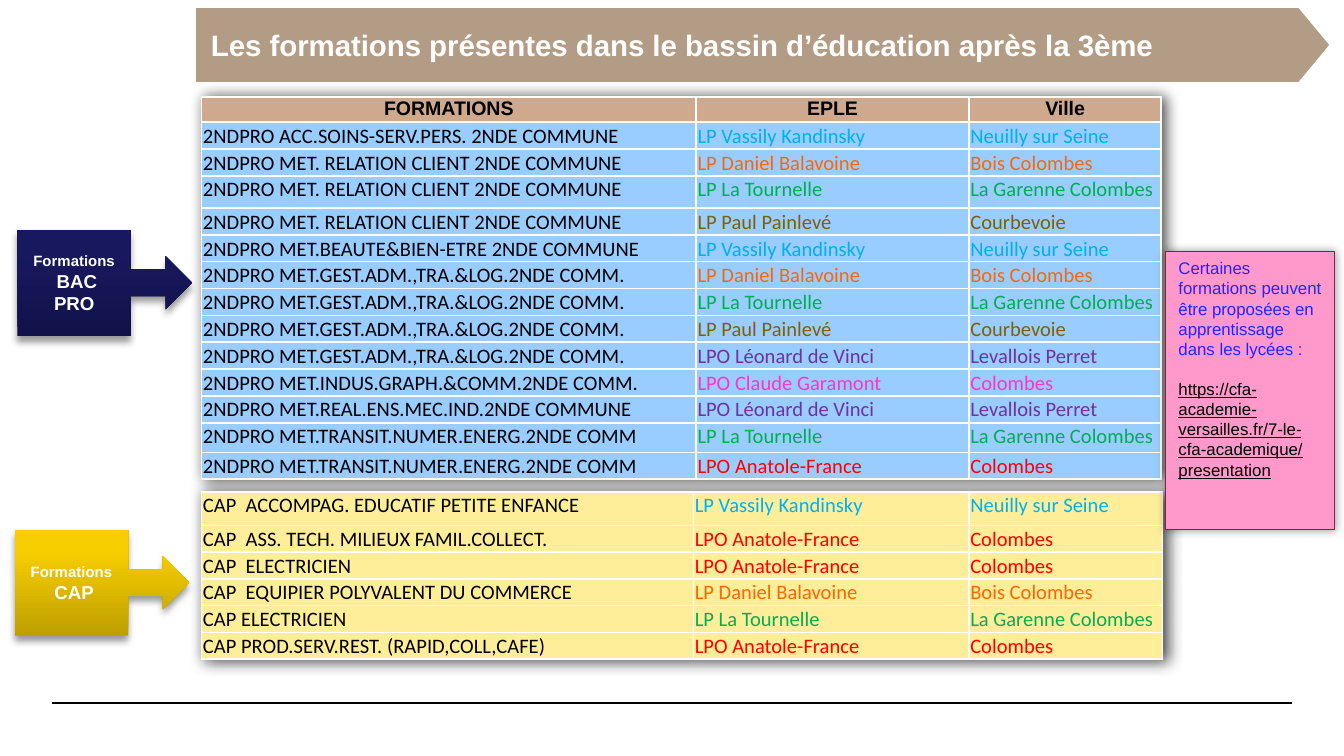
from lxml.etree import SubElement
from pptx import Presentation
from pptx.dml.color import RGBColor
from pptx.enum.shapes import MSO_CONNECTOR, MSO_SHAPE
from pptx.enum.text import MSO_ANCHOR, MSO_AUTO_SIZE, PP_ALIGN
from pptx.oxml import parse_xml
from pptx.oxml.ns import qn
from pptx.util import Inches, Pt

NS = 'xmlns:a="http://schemas.openxmlformats.org/drawingml/2006/main"'
COLORS = {
    "black": "000000", "white": "FFFFFF", "banner": "B29C85", "header": "CFA98D",
    "bac": "99CCFF", "cap": "FFEE99", "note": "FF99CC", "note_line": "8C1F34",
    "note_text": "2424FF", "cyan": "00B0F0", "orange": "FF6600", "green": "00B050",
    "olive": "806000", "purple": "7030A0", "pink": "FF33CC", "red": "FF0000",
}
RGB = {name: RGBColor.from_string(value) for name, value in COLORS.items()}

# School: full name, town, text colour
SCHOOLS = {
    "Kandinsky": ("LP Vassily Kandinsky", "Neuilly sur Seine", "cyan"),
    "Balavoine": ("LP Daniel Balavoine", "Bois Colombes", "orange"),
    "Tournelle": ("LP La Tournelle", "La Garenne Colombes", "green"),
    "Painlevé": ("LP Paul Painlevé", "Courbevoie", "olive"),
    "Vinci": ("LPO Léonard de Vinci", "Levallois Perret", "purple"),
    "Garamont": ("LPO Claude Garamont", "Colombes", "pink"),
    "France": ("LPO Anatole-France", "Colombes", "red"),
}
CLIENT = "2NDPRO MET. RELATION CLIENT 2NDE COMMUNE"
GESTION = "2NDPRO MET.GEST.ADM.,TRA.&LOG.2NDE COMM."
ENERGIE = "2NDPRO MET.TRANSIT.NUMER.ENERG.2NDE COMM"
# Course, school, row height
BAC_PRO = [
    ("2NDPRO ACC.SOINS-SERV.PERS. 2NDE COMMUNE", "Kandinsky", 0.18),
    (CLIENT, "Balavoine", 0.2),
    (CLIENT, "Tournelle", 0.24),
    (CLIENT, "Painlevé", 0.2),
    ("2NDPRO MET.BEAUTE&BIEN-ETRE 2NDE COMMUNE", "Kandinsky", 0.18),
    (GESTION, "Balavoine", 0.2),
    (GESTION, "Tournelle", 0.18),
    (GESTION, "Painlevé", 0.2),
    (GESTION, "Vinci", 0.2),
    ("2NDPRO MET.INDUS.GRAPH.&COMM.2NDE COMM.", "Garamont", 0.2),
    ("2NDPRO MET.REAL.ENS.MEC.IND.2NDE COMMUNE", "Vinci", 0.2),
    (ENERGIE, "Tournelle", 0.22),
    (ENERGIE, "France", 0.2),
]
CAP = [
    ("CAP  ACCOMPAG. EDUCATIF PETITE ENFANCE", "Kandinsky", 0.25),
    ("CAP  ASS. TECH. MILIEUX FAMIL.COLLECT.", "France", 0.17),
    ("CAP  ELECTRICIEN", "France", 0.17),
    ("CAP  EQUIPIER POLYVALENT DU COMMERCE", "Balavoine", 0.17),
    ("CAP ELECTRICIEN", "Tournelle", 0.17),
    ("CAP PROD.SERV.REST. (RAPID,COLL,CAFE)", "France", 0.17),
]


def add_run(p, text, size, color, font="Arial", bold=False):
    r = p.add_run()
    r.text = text
    r.font.size = Pt(size)
    r.font.name = font
    r.font.bold = bold
    r.font.color.rgb = RGB[color]
    return r


def shadow(alpha, blur, dist, angle):
    """Effect list with one black outer shadow: percent, points, points, degrees."""
    return parse_xml(
        f'<a:effectLst {NS}><a:outerShdw blurRad="{Pt(blur)}" dist="{Pt(dist)}" '
        f'dir="{angle * 60000}" algn="ctr" rotWithShape="0"><a:srgbClr val="000000">'
        f'<a:alpha val="{alpha * 1000}"/></a:srgbClr></a:outerShdw></a:effectLst>')


prs = Presentation()
prs.slide_width = Inches(10)
prs.slide_height = Inches(10) * 9 // 16
s = prs.slides.add_slide(prs.slide_layouts[5])

# Rule at the foot
rule = s.shapes.add_connector(MSO_CONNECTOR.STRAIGHT, Inches(0.39), Inches(5.23),
                              Inches(9.61), Inches(5.23))
rule.line.color.rgb = RGB["black"]
rule.line.width = Pt(0.8)
SubElement(rule._element.spPr, qn("a:effectLst"))

# Title on its arrow banner
banner = s.shapes.add_shape(MSO_SHAPE.PENTAGON, Inches(1.46), Inches(0.06),
                            Inches(8.43), Inches(0.55))
banner.adjustments[0] = 0.415
banner.shadow.inherit = False
banner.fill.solid()
banner.fill.fore_color.rgb = RGB["banner"]
banner.line.fill.background()

title = s.shapes.title
title.left, title.top = banner.left, banner.top
title.width, title.height = banner.width, banner.height
banner._element.addnext(title._element)
tf = title.text_frame
tf.word_wrap = True
tf.auto_size = MSO_AUTO_SIZE.NONE
tf.vertical_anchor = MSO_ANCHOR.MIDDLE
tf.margin_left = tf.margin_right = Inches(0.11)
tf.margin_top = tf.margin_bottom = Inches(0.05)
tf.paragraphs[0].alignment = PP_ALIGN.JUSTIFY
add_run(tf.paragraphs[0], "Les formations présentes dans le bassin d’éducation après la 3ème",
        15.75, "white", bold=True)

# Course tables
for courses, fill, top, widths, has_header in (
        (BAC_PRO, "bac", 0.72, (3.68, 2.03, 1.43), True),
        (CAP, "cap", 3.66, (3.66, 2.05, 1.44), False)):
    rows = []
    if has_header:
        rows.append((("FORMATIONS", "EPLE", "Ville"), ("black",) * 3, 0.19))
    for course, school, height in courses:
        name, town, color = SCHOOLS[school]
        rows.append(((course, name, town), ("black", color, color), height))

    table = s.shapes.add_table(len(rows), 3, Inches(1.5), Inches(top), Inches(7.15),
                               Inches(sum(row[2] for row in rows))).table
    table.first_row = has_header
    table.horz_banding = False
    table._tbl.tblPr.insert(0, shadow(70, 8, 2, 0))
    for column, width in zip(table.columns, widths):
        column.width = Inches(width)
    for i, (texts, colors, height) in enumerate(rows):
        table.rows[i].height = Inches(height)
        is_header = has_header and i == 0
        for j, (text, color) in enumerate(zip(texts, colors)):
            cell = table.cell(i, j)
            cell.margin_left = cell.margin_right = cell.margin_top = Inches(0.01)
            cell.margin_bottom = 0
            tcPr = cell._tc.get_or_add_tcPr()
            for side in ("lnL", "lnR", "lnT", "lnB"):
                tcPr.append(parse_xml(
                    f'<a:{side} {NS} w="{Pt(1)}"><a:solidFill><a:srgbClr '
                    f'val="{COLORS["white"]}"/></a:solidFill></a:{side}>'))
            cell.fill.solid()
            cell.fill.fore_color.rgb = RGB["header" if is_header else fill]
            p = cell.text_frame.paragraphs[0]
            if is_header:
                p.alignment = PP_ALIGN.CENTER
                add_run(p, text, 10.5, color, bold=True)
            else:
                add_run(p, text, 11, color, "Calibri")

# Arrow callouts pointing at the tables
for label, left, top, stops in (
        (" BAC PRO", 0.13, 1.71, ((0, "12124A"), (80, "18185F"), (100, "161661"))),
        (" CAP", 0.11, 3.94, ((0, "BE9F00"), (80, "F7CE00"), (100, "F8CF00")))):
    sp = s.shapes.add_shape(MSO_SHAPE.RIGHT_ARROW_CALLOUT, Inches(left), Inches(top),
                            Inches(1.3), Inches(0.79))
    sp.line.fill.background()
    stop_xml = "".join(f'<a:gs pos="{pos * 1000}"><a:srgbClr val="{color}"/></a:gs>'
                       for pos, color in stops)
    spPr = sp._element.spPr
    spPr.insert(2, parse_xml(f'<a:gradFill {NS} rotWithShape="1"><a:gsLst>{stop_xml}</a:gsLst>'
                             '<a:lin ang="16200000" scaled="0"/></a:gradFill>'))
    spPr.append(shadow(40, 4, 3, 90))
    tf = sp.text_frame
    tf.word_wrap = True
    tf.vertical_anchor = MSO_ANCHOR.MIDDLE
    p = tf.paragraphs[0]
    p.alignment = PP_ALIGN.CENTER
    add_run(p, "Formations", 8, "white", bold=True)
    p.add_line_break()
    add_run(p, label, 10, "white", bold=True)

# Apprenticeship note
note = s.shapes.add_shape(MSO_SHAPE.RECTANGLE, Inches(8.67), Inches(1.87),
                          Inches(1.26), Inches(2.07))
note.fill.solid()
note.fill.fore_color.rgb = RGB["note"]
note.line.color.rgb = RGB["note_line"]
note.line.width = Pt(0.75)
note._element.spPr.append(shadow(40, 5, 0, 0))
tf = note.text_frame
tf.word_wrap = True
tf.vertical_anchor = MSO_ANCHOR.TOP
p = tf.paragraphs[0]
p.alignment = PP_ALIGN.LEFT
add_run(p, "Certaines formations peuvent être proposées en apprentissage dans les lycées :",
        9, "note_text")
p = tf.add_paragraph()
p.alignment = PP_ALIGN.LEFT
p.space_before = Pt(10.5)
r = add_run(p, "https://cfa-academie-versailles.fr/7-le-cfa-academique/presentation", 9, "black")
r.font.underline = True

prs.save("out.pptx")
